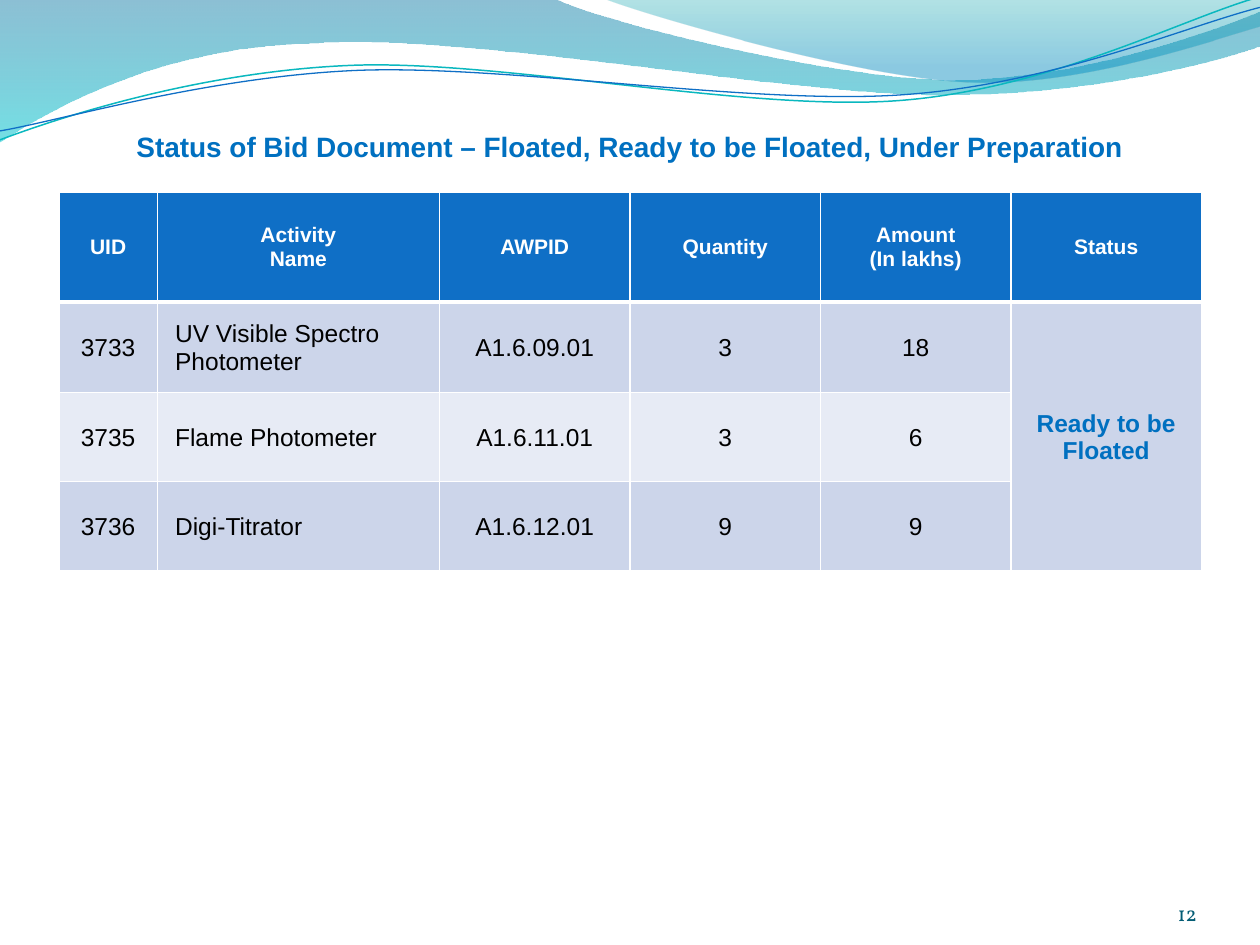
import lxml.etree
import pptx
import pptx.dml.color
import pptx.enum.text
import pptx.oxml.ns
import pptx.util

Cm = pptx.util.Cm
Pt = pptx.util.Pt
RGBColor = pptx.dml.color.RGBColor
ALIGN = pptx.enum.text.PP_ALIGN
ANCHOR = pptx.enum.text.MSO_ANCHOR
qn = pptx.oxml.ns.qn

WHITE = RGBColor(0xFF, 0xFF, 0xFF)
BLACK = RGBColor(0x00, 0x00, 0x00)
BLUE = RGBColor(0x0F, 0x6F, 0xC6)
ACCENT = RGBColor(0x00, 0x70, 0xC0)
DARK_TEAL = RGBColor(0x04, 0x5D, 0x75)
TEAL_LINE = RGBColor(0x0A, 0xB8, 0xBF)
WAVE_TOP = RGBColor(0x00, 0x74, 0xA1)
WAVE_BOTTOM = RGBColor(0x00, 0xC6, 0xCF)
CREST_TOP = RGBColor(0x00, 0xA1, 0xA9)
CREST_BOTTOM = RGBColor(0x00, 0x8B, 0xBF)
BANDS = (RGBColor(0xCC, 0xD5, 0xEA), RGBColor(0xE7, 0xEB, 0xF5))

COLUMN_WIDTHS = [1.98, 5.69] + [3.84] * 4
ROW_HEIGHTS = [2.21, 1.82, 1.8, 1.8]
HEADERS = ["UID", "Activity\nName", "AWPID", "Quantity", "Amount\n(In lakhs)", "Status"]
ITEMS = [
    ["3733", "UV Visible Spectro Photometer", "A1.6.09.01", "3", "18", "Ready to be Floated"],
    ["3735", "Flame Photometer", "A1.6.11.01", "3", "6", ""],
    ["3736", "Digi-Titrator", "A1.6.12.01", "9", "9", ""],
]
ACTIVITY, STATUS = 1, 5

WAVE = [
    (0, 0), (11.18, -0.03),
    (12.09, 0.43, 16.87, 1.6, 19.25, 1.6),
    (21.67, 1.6, 24.33, 0.66, 25.4, 0.23),
    (25.43, 0.91),
    (24.97, 1.12, 22.1, 1.93, 18.95, 1.91),
    (15.8, 1.91, 9.7, 0.71, 6.53, 0.86),
    (3.28, 0.91, 1.17, 2.11, -0.03, 2.87),
]
CREST = [
    (12.17, -0.03),
    (12.93, 0.28, 17.32, 1.57, 19.53, 1.65),
    (21.74, 1.75, 24.41, 0.81, 25.4, 0.53),
    (25.4, 0),
]
TEAL_RIPPLE = [
    (0, 2.82),
    (1.22, 2.36, 4.01, 1.45, 7.04, 1.32),
    (10.03, 1.19, 15.06, 2.26, 18.11, 2.03),
    (21.16, 1.8, 23.83, 0.38, 25.35, -0.05),
]
BLUE_RIPPLE = [
    (0, 2.64),
    (1.19, 2.44, 4.17, 1.55, 7.19, 1.42),
    (10.24, 1.3, 15.16, 2.13, 18.21, 1.91),
    (21.23, 1.7, 23.9, 0.53, 25.4, 0.15),
]


def add_path(slide, left, top, segments, closed):
    ends = [(Cm(left + segment[-2]), Cm(top + segment[-1])) for segment in segments]
    builder = slide.shapes.build_freeform(*ends[0])
    builder.add_line_segments(ends[1:], close=closed)
    shape = builder.convert_to_shape()
    shape.shadow.inherit = False
    straight_lines = list(shape._element.iter(qn("a:lnTo")))
    for straight_line, segment in zip(straight_lines, segments[1:]):
        if len(segment) == 2:
            continue
        curve = lxml.etree.Element(qn("a:cubicBezTo"))
        for x, y in zip(segment[::2], segment[1::2]):
            lxml.etree.SubElement(curve, qn("a:pt"), x=str(Cm(left + x) - shape.left),
                                  y=str(Cm(top + y) - shape.top))
        straight_line.getparent().replace(straight_line, curve)
    return shape


def add_waves(slide, left, top):
    for segments, stops in (
        (WAVE, ((0, WAVE_TOP, 45), (1, WAVE_BOTTOM, 55))),
        (CREST, ((0, CREST_TOP, 30), (0.8, CREST_BOTTOM, 45))),
    ):
        shape = add_path(slide, left, top, segments, True)
        shape.line.fill.background()
        shape.fill.gradient()
        shape.fill.gradient_angle = 270
        for stop, (position, color, opacity) in zip(shape.fill.gradient_stops, stops):
            stop.position = position
            stop.color.rgb = color
        colors = shape._element.spPr.iter(qn("a:srgbClr"))
        for element, (position, color, opacity) in zip(colors, stops):
            lxml.etree.SubElement(element, qn("a:alpha"), val=str(opacity * 1000))
    for segments, color, width in ((TEAL_RIPPLE, TEAL_LINE, 0.85), (BLUE_RIPPLE, BLUE, 0.75)):
        shape = add_path(slide, left, top, segments, False)
        shape.fill.background()
        shape.line.color.rgb = color
        shape.line.width = Pt(width)


def write_text(text_frame, text, alignment, font_name, size, color, bold):
    text_frame.text = text
    text_frame.word_wrap = True
    for paragraph in text_frame.paragraphs:
        paragraph.alignment = alignment
        for run in paragraph.runs:
            run.font.name = font_name
            run.font.size = Pt(size)
            run.font.color.rgb = color
            run.font.bold = bold


def add_label(slide, left, top, width, height, text, alignment, font_name, size, color, bold,
              inset_top=0):
    shape = slide.shapes.add_textbox(Cm(left), Cm(top), Cm(width), Cm(height))
    text_frame = shape.text_frame
    text_frame.margin_left = text_frame.margin_right = text_frame.margin_bottom = 0
    text_frame.margin_top = Cm(inset_top)
    text_frame.vertical_anchor = ANCHOR.BOTTOM
    write_text(text_frame, text, alignment, font_name, size, color, bold)


def set_borders(cell, top_width, bottom_width):
    properties = cell._tc.get_or_add_tcPr()
    sides = (("a:lnL", 1), ("a:lnR", 1), ("a:lnT", top_width), ("a:lnB", bottom_width))
    for index, (tag, width) in enumerate(sides):
        line = lxml.etree.Element(qn(tag), w=str(Pt(width)))
        fill = lxml.etree.SubElement(line, qn("a:solidFill"))
        lxml.etree.SubElement(fill, qn("a:srgbClr"), val=str(WHITE))
        properties.insert(index, line)


def add_bid_table(slide, left, top):
    table = slide.shapes.add_table(
        len(ROW_HEIGHTS), len(COLUMN_WIDTHS), Cm(left), Cm(top),
        Cm(sum(COLUMN_WIDTHS)), Cm(sum(ROW_HEIGHTS))).table
    table.horz_banding = False
    for column, width in zip(table.columns, COLUMN_WIDTHS):
        column.width = Cm(width)
    for row, height in zip(table.rows, ROW_HEIGHTS):
        row.height = Cm(height)
    table.cell(1, STATUS).merge(table.cell(len(ITEMS), STATUS))
    for row_index, texts in enumerate([HEADERS] + ITEMS):
        is_header = row_index == 0
        for column_index, text in enumerate(texts):
            cell = table.cell(row_index, column_index)
            is_status = column_index == STATUS
            is_activity = column_index == ACTIVITY and not is_header
            cell.vertical_anchor = ANCHOR.MIDDLE
            if not is_header:
                cell.margin_left = cell.margin_right = cell.margin_top = Cm(0.03)
                cell.margin_bottom = 0
            color = WHITE if is_header else ACCENT if is_status else BLACK
            write_text(cell.text_frame, text, ALIGN.LEFT if is_activity else ALIGN.CENTER,
                       "Arial", 12 if is_header else 14, color, is_header or is_status)
            if is_activity:
                paragraph = cell.text_frame.paragraphs[0]
                paragraph._p.get_or_add_pPr().set("marL", str(Cm(0.33)))
            cell.fill.solid()
            band = BANDS[0] if is_status else BANDS[(row_index - 1) % 2]
            cell.fill.fore_color.rgb = BLUE if is_header else band
            set_borders(cell, 3 if row_index == 1 else 1, 3 if is_header else 1)


def main():
    presentation = pptx.Presentation()
    presentation.slide_width = Cm(25.4)
    presentation.slide_height = Cm(19.05)
    slide = presentation.slides.add_slide(presentation.slide_layouts[6])
    add_waves(slide, 0, 0)
    add_label(slide, 22.02, 17.65, 2.11, 1.02, "12", ALIGN.RIGHT, "Vollkorn", 12,
              DARK_TEAL, False)
    add_label(slide, 0.99, 2.39, 23.42, 0.89,
              "Status of Bid Document – Floated, Ready to be Floated, Under Preparation",
              ALIGN.CENTER, "Arial", 16, ACCENT, True, inset_top=0.13)
    add_bid_table(slide, 1.19, 3.88)
    presentation.save("out.pptx")


if __name__ == "__main__":
    main()
